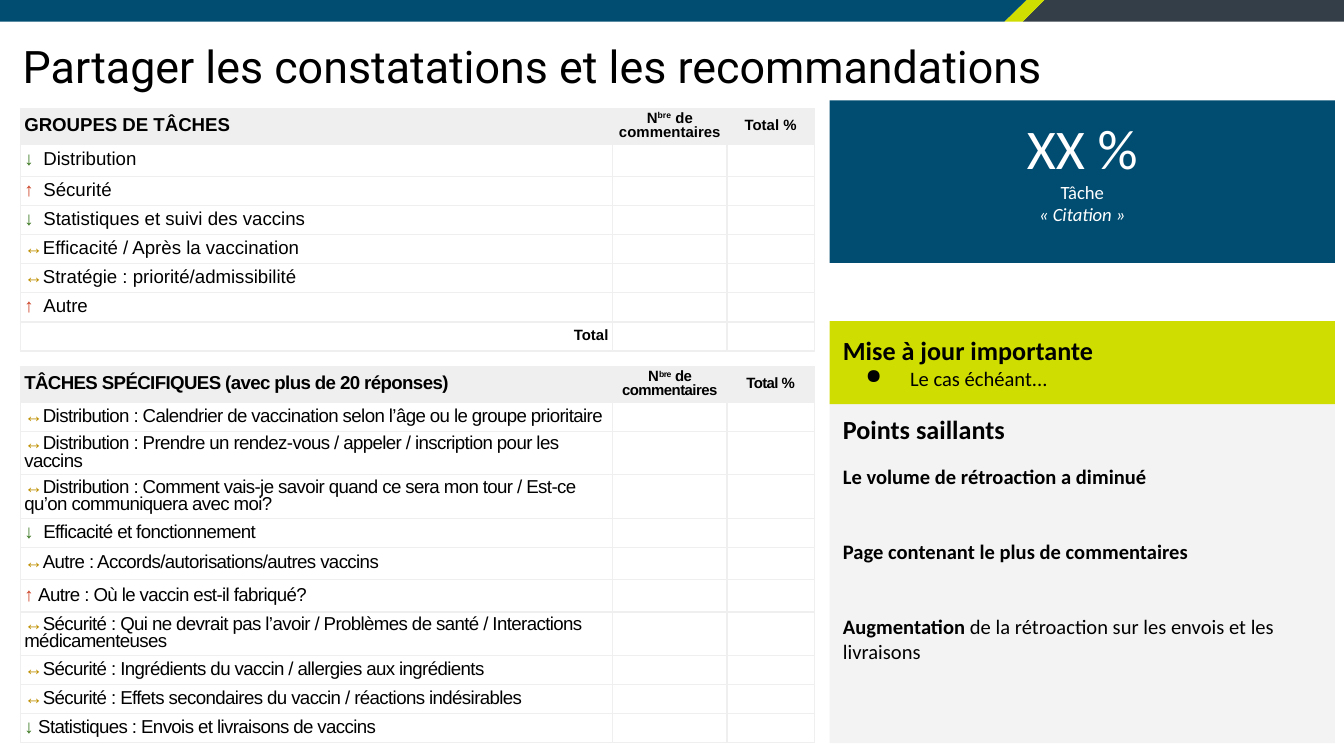
import pptx
import pptx.dml.color
import pptx.enum.shapes
import pptx.enum.text
import pptx.oxml
import pptx.oxml.ns
import pptx.util
from pptx.util import Cm

ALIGN = pptx.enum.text.PP_ALIGN
ANCHOR = pptx.enum.text.MSO_ANCHOR
NAMESPACE = pptx.oxml.ns.nsdecls("a")

COLORS = {
    "black": "000000", "white": "FFFFFF", "slate": "333E48", "lime": "CFDE00",
    "blue": "004D71", "grid": "EFEFEF", "panel": "F3F3F3",
    "↓": "38761D", "↑": "CC4125", "↔": "BF9000",
}

BANDS = [
    ("slate", [(19.74, 0), (19.33, 0.41), (25.4, 0.41), (25.4, 0)]),
    ("lime", [(19.4, 0), (18.98, 0.41), (19.33, 0.41), (19.74, 0)]),
    ("blue", [(0, 0), (0, 0.41), (18.98, 0.41), (19.4, 0)]),
]

# Row heights in centimetres
HEAD, LOW, TALL, DOUBLE = 0.66, 0.55, 0.61, 0.77
COLUMNS = [11.2, 2.16, 1.65]

# Each row: height, arrow, gap after the arrow, wording
GROUPS = [
    (TALL, "↓", "\t", "Distribution"),
    (LOW, "↑", "\t", "Sécurité"),
    (LOW, "↓", "\t", "Statistiques et suivi des vaccins"),
    (LOW, "↔", "", "Efficacité / Après la vaccination"),
    (LOW, "↔", "", "Stratégie : priorité/admissibilité"),
    (LOW, "↑", "\t", "Autre"),
    (LOW, "", "", "Total"),
]
TASKS = [
    (LOW, "↔", "", "Distribution : Calendrier de vaccination selon l’âge ou le groupe prioritaire"),
    (DOUBLE, "↔", "", "Distribution : Prendre un rendez-vous / appeler / inscription pour les vaccins"),
    (DOUBLE, "↔", "", "Distribution : Comment vais-je savoir quand ce sera mon tour / "
                      "Est-ce qu’on communiquera avec moi?"),
    (LOW, "↓", "\t", "Efficacité et fonctionnement"),
    (TALL, "↔", "", "Autre : Accords/autorisations/autres vaccins"),
    (TALL, "↑", " ", "Autre : Où le vaccin est-il fabriqué?"),
    (DOUBLE, "↔", "", "Sécurité : Qui ne devrait pas l’avoir / Problèmes de santé / "
                      "Interactions médicamenteuses"),
    (LOW, "↔", "", "Sécurité : Ingrédients du vaccin / allergies aux ingrédients"),
    (LOW, "↔", "", "Sécurité : Effets secondaires du vaccin / réactions indésirables"),
    (LOW, "↓", " ", "Statistiques : Envois et livraisons de vaccins"),
]


def rgb(name):
    return pptx.dml.color.RGBColor.from_string(COLORS[name])


def paint(shape, color):
    shape.fill.solid()
    shape.fill.fore_color.rgb = rgb(color)
    shape.line.fill.background()
    shape.shadow.inherit = False


def add_span(para, text):
    span = para.add_run()
    span.text = text
    return span


def style(para, size, face, color="black", bold=False):
    font = para.font
    font.size, font.name, font.bold = pptx.util.Pt(size), face, bold
    font.color.rgb = rgb(color)


def set_insets(frame, inset):
    frame.margin_left = frame.margin_right = Cm(inset)
    frame.margin_top = frame.margin_bottom = Cm(inset)


def add_band(page, color, points):
    corners = [(Cm(x), Cm(y)) for x, y in points]
    builder = page.shapes.build_freeform(*corners[0])
    builder.add_line_segments(corners[1:])
    paint(builder.convert_to_shape(), color)


def add_title(page, text):
    box = page.shapes.add_textbox(Cm(0.18), Cm(0.48), Cm(23.67), Cm(1.27))
    frame = box.text_frame
    frame.word_wrap = True
    set_insets(frame, 0.25)
    add_span(frame.paragraphs[0], text)
    style(frame.paragraphs[0], 24, "Roboto")


def add_panel(page, top, height, color):
    """Add a right-hand rectangle and return its text frame."""
    box = page.shapes.add_shape(pptx.enum.shapes.MSO_SHAPE.RECTANGLE,
                                Cm(15.68), Cm(top), Cm(9.55), Cm(height))
    paint(box, color)
    frame = box.text_frame
    frame.word_wrap = True
    frame.vertical_anchor = ANCHOR.TOP
    set_insets(frame, 0.25)
    return frame


def add_line(frame, text, size, color="black", bold=False, align=ALIGN.LEFT, gap=0):
    """Write the next paragraph of a panel, gap points below the last one."""
    para = frame.paragraphs[0]
    if para.runs:
        para = frame.add_paragraph()
    para.alignment = align
    para.space_before = pptx.util.Pt(gap)
    span = add_span(para, text)
    style(para, size, "Calibri", color, bold)
    return para, span


def add_bullet(para):
    properties = para._p.get_or_add_pPr()
    properties.set("marL", str(Cm(1.27)))
    properties.set("indent", str(Cm(-0.84)))
    bullet = pptx.oxml.parse_xml(f'<a:buChar {NAMESPACE} char="●"/>')
    properties.insert_element_before(bullet, "a:tabLst", "a:defRPr")


def add_tab_stop(para, position):
    stops = pptx.oxml.parse_xml(
        f'<a:tabLst {NAMESPACE}><a:tab pos="{Cm(position)}" algn="l"/></a:tabLst>')
    para._p.get_or_add_pPr().insert_element_before(stops, "a:defRPr")


def format_cell(cell, filled):
    cell.vertical_anchor = ANCHOR.MIDDLE
    cell.margin_left = cell.margin_right = Cm(0.08)
    cell.margin_top = cell.margin_bottom = Cm(0.05)
    if filled:
        cell.fill.solid()
        cell.fill.fore_color.rgb = rgb("grid")
    else:
        cell.fill.background()
    for index, side in enumerate("LRTB"):
        border = pptx.oxml.parse_xml(
            f'<a:ln{side} {NAMESPACE} w="{pptx.util.Pt(0.75)}"><a:solidFill>'
            f'<a:srgbClr val="{COLORS["grid"]}"/></a:solidFill></a:ln{side}>')
        cell._tc.get_or_add_tcPr().insert(index, border)
    para = cell.text_frame.paragraphs[0]
    para.line_spacing = 0.85
    para._p.get_or_add_endParaRPr().set("sz", "800")


def cell_para(cell, size, bold, align, tracking):
    """Style the paragraph of a cell; tracking is in hundredths of a point."""
    para = cell.text_frame.paragraphs[0]
    para.alignment = align
    style(para, size, "Arial", bold=bold)
    if tracking:
        para.font._element.set("spc", str(tracking))
    return para


def add_task_table(page, top, heading, rows, tracking=0):
    heights = [HEAD] + [row[0] for row in rows]
    table = page.shapes.add_table(len(heights), len(COLUMNS), Cm(0.38), Cm(top),
                                  Cm(sum(COLUMNS)), Cm(sum(heights))).table
    table.first_row = table.horz_banding = False
    for column, width in zip(table.columns, COLUMNS):
        column.width = Cm(width)
    for index, (row, height) in enumerate(zip(table.rows, heights)):
        row.height = Cm(height)
        for cell in row.cells:
            format_cell(cell, filled=index == 0)

    add_span(cell_para(table.cell(0, 0), 10, True, ALIGN.LEFT, tracking), heading)
    para = cell_para(table.cell(0, 1), 8, True, ALIGN.CENTER, tracking)
    add_span(para, "N")
    add_span(para, "bre").font._element.set("baseline", "30000")
    add_span(para, " de commentaires")
    add_span(cell_para(table.cell(0, 2), 8, True, ALIGN.CENTER, tracking), "Total %")

    for index, (_, arrow, gap, text) in enumerate(rows, start=1):
        cell = table.cell(index, 0)
        if not arrow:
            add_span(cell_para(cell, 8, True, ALIGN.RIGHT, tracking), text)
            continue
        para = cell_para(cell, 10, False, ALIGN.LEFT, tracking)
        if gap == "\t":
            add_tab_stop(para, 0.36)
        mark = add_span(para, arrow + gap)
        mark.font.bold = arrow != "↔"
        mark.font.color.rgb = rgb(arrow)
        add_span(para, text)


def main():
    deck = pptx.Presentation()
    deck.slide_width, deck.slide_height = Cm(25.4), Cm(14.29)
    page = deck.slides.add_slide(deck.slide_layouts[6])
    for color, points in BANDS:
        add_band(page, color, points)
    add_title(page, "Partager les constatations et les recommandations")
    add_task_table(page, 2.05, "GROUPES DE TÂCHES", GROUPS)
    add_task_table(page, 6.93, "TÂCHES SPÉCIFIQUES (avec plus de 20 réponses)", TASKS, -30)

    highlights = add_panel(page, 7.57, 6.48, "panel")
    add_line(highlights, "Points saillants", 14, bold=True)
    add_line(highlights, "Le volume de rétroaction a diminué", 11, bold=True, gap=10)
    add_line(highlights, "Page contenant le plus de commentaires", 11, bold=True, gap=27)
    para, span = add_line(highlights, "Augmentation", 11, gap=27)
    span.font.bold = True
    add_span(para, " de la rétroaction sur les envois et les livraisons")

    figure = add_panel(page, 1.9, 3.07, "blue")
    add_line(figure, "XX %", 30, "white", align=ALIGN.CENTER)
    add_line(figure, "Tâche", 10, "white", align=ALIGN.CENTER)
    _, quote = add_line(figure, "« Citation »", 10, "white", align=ALIGN.CENTER)
    quote.font.italic = True

    update = add_panel(page, 6.07, 1.57, "lime")
    add_line(update, "Mise à jour importante", 14, bold=True)
    para, _ = add_line(update, "Le cas échéant...", 11)
    add_bullet(para)
    deck.save("out.pptx")


if __name__ == "__main__":
    main()
